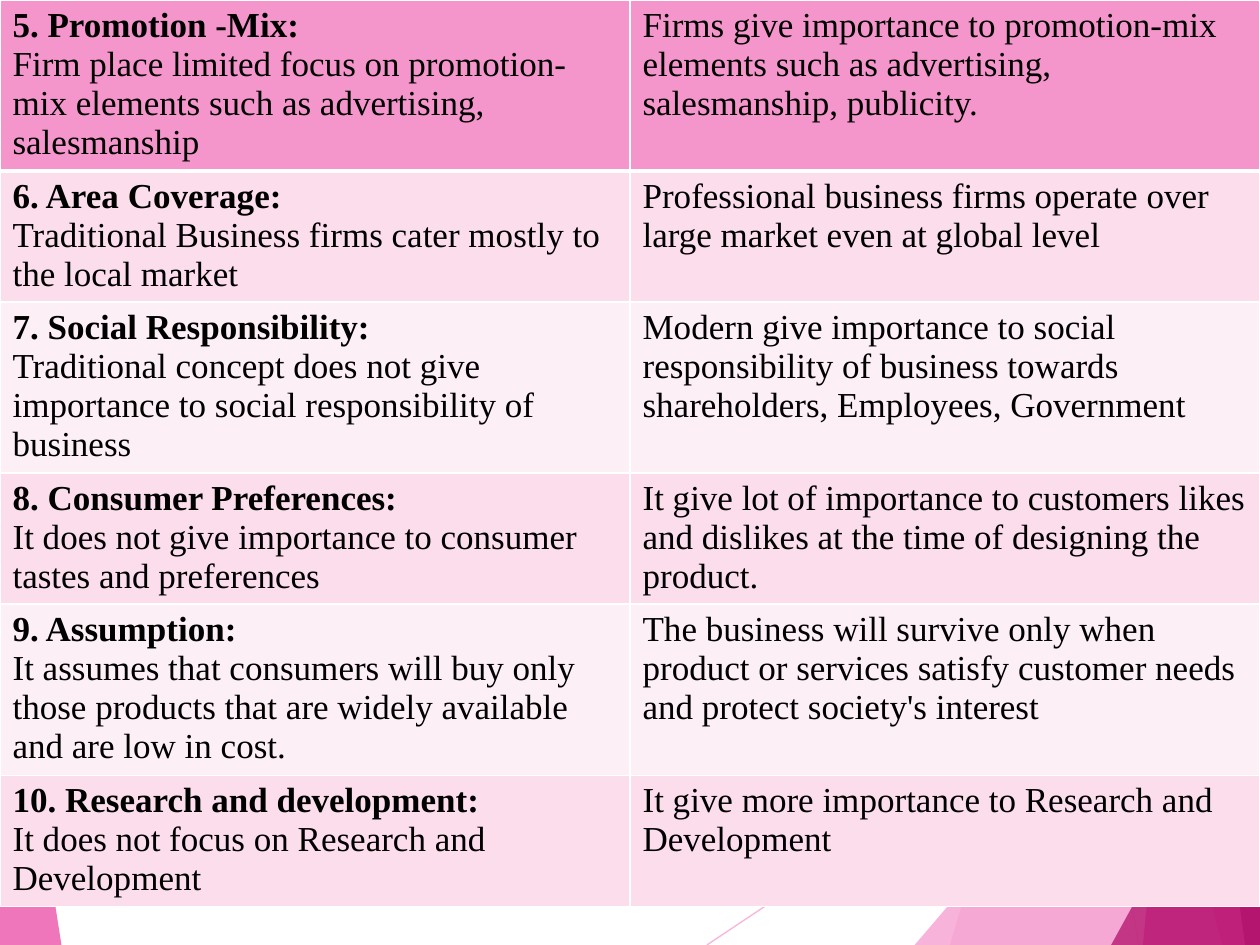
from lxml import etree
from pptx import Presentation
from pptx.dml.color import RGBColor
from pptx.enum.shapes import MSO_CONNECTOR
from pptx.oxml.ns import qn
from pptx.util import Cm, Pt

STRAIGHT = MSO_CONNECTOR.STRAIGHT
WIDTH, HEIGHT = 25.4, 19.05
FONT = "Times New Roman"
BLACK = RGBColor(0x00, 0x00, 0x00)
WHITE = RGBColor(0xFF, 0xFF, 0xFF)
PINK = RGBColor(0xF4, 0x96, 0xCB)
MAGENTA = RGBColor(0xEB, 0x3D, 0x9F)
CRIMSON = RGBColor(0xB2, 0x13, 0x6D)
BAND_DARK = RGBColor(0xFB, 0xDD, 0xEC)
BAND_LIGHT = RGBColor(0xFD, 0xEF, 0xF6)

LINES = [
    ((14.25, HEIGHT), (WIDTH, 11.62)),
    ((19.56, 0), (22.96, HEIGHT)),
]
RIGHT_PANELS = [
    (24.77, 0, 19.15, PINK, 36),
    (20.02, 0, 23.34, PINK, 20),
    (WIDTH, 10.9, 18.44, PINK, 72),
    (19.48, 0, 24.64, MAGENTA, 50),
    (24.92, 0, 23.04, MAGENTA, 66),
    (22.48, 0, 25.1, CRIMSON, 80),
    (WIDTH, 13.59, 22.4, CRIMSON, 76),
]
LEFT_PANEL = [(0, 11.15), (1.24, HEIGHT), (0, HEIGHT)]

ROWS = [
    ("5. Promotion -Mix:",
     "Firm place limited focus on promotion-mix elements such as advertising, salesmanship",
     "Firms give importance to promotion-mix elements such as advertising, "
     "salesmanship, publicity."),
    ("6. Area Coverage:",
     "Traditional Business firms cater mostly to the local market",
     "Professional business firms operate over large market even at global level"),
    ("7. Social Responsibility:",
     "Traditional concept does not give importance to social responsibility of business",
     "Modern give importance to social responsibility of business towards "
     "shareholders, Employees, Government"),
    ("8. Consumer Preferences:",
     "It does not give importance to consumer tastes and preferences",
     "It give lot of importance to customers likes and dislikes at the time of "
     "designing the product."),
    ("9. Assumption:",
     "It assumes that consumers will buy only those products that are widely "
     "available and are low in cost.",
     "The business will survive only when product or services satisfy customer "
     "needs and protect society's interest"),
    ("10. Research and development:",
     "It does not focus on Research and Development",
     "It give more importance to Research and Development"),
]
ROW_HEIGHTS = [3.45, 2.64] * 3


def set_opacity(shape, percent):
    color = shape._element.spPr.find(".//" + qn("a:srgbClr"))
    etree.SubElement(color, qn("a:alpha")).set("val", str(percent * 1000))


def add_accent_line(page, start, end):
    line = page.shapes.add_connector(STRAIGHT, *map(Cm, start + end))
    line.line.color.rgb = PINK
    line.line.width = Pt(0.75)
    set_opacity(line, 70)
    etree.SubElement(line._element.spPr, qn("a:effectLst"))


def add_panel(page, points, color, opacity):
    corners = [(Cm(x), Cm(y)) for x, y in points]
    builder = page.shapes.build_freeform(*corners[0])
    builder.add_line_segments(corners[1:], close=True)
    panel = builder.convert_to_shape()
    panel.shadow.inherit = False
    panel.fill.solid()
    panel.fill.fore_color.rgb = color
    panel.line.fill.background()
    set_opacity(panel, opacity)


def add_backdrop(page):
    for start, end in LINES:
        add_accent_line(page, start, end)
    for top_x, top_y, bottom_x, color, opacity in RIGHT_PANELS:
        points = [(top_x, top_y), (bottom_x, HEIGHT), (WIDTH, HEIGHT)]
        if top_x < WIDTH:
            points.append((WIDTH, top_y))
        add_panel(page, points, color, opacity)
    add_panel(page, LEFT_PANEL, MAGENTA, 70)


def set_borders(cell, top, bottom):
    properties = cell._tc.get_or_add_tcPr()
    sides = [("L", 1), ("R", 1), ("T", top), ("B", bottom)]
    for index, (side, points) in enumerate(sides):
        border = etree.Element(qn("a:ln" + side), w=str(Pt(points)))
        fill = etree.SubElement(border, qn("a:solidFill"))
        etree.SubElement(fill, qn("a:srgbClr"), val=str(WHITE))
        properties.insert(index, border)


def fill_cell(cell, texts, color):
    cell.fill.solid()
    cell.fill.fore_color.rgb = color
    frame = cell.text_frame
    frame.text = "\n".join(texts)
    for index, para in enumerate(frame.paragraphs):
        for span in para.runs:
            span.font.name = FONT
            span.font.size = Pt(20)
            span.font.color.rgb = BLACK
            span.font.bold = index == 0 and len(texts) > 1


def add_comparison_table(page):
    table = page.shapes.add_table(
        len(ROWS), 2, Cm(0), Cm(0), Cm(WIDTH), Cm(sum(ROW_HEIGHTS))
    ).table
    for index, (heading, traditional, modern) in enumerate(ROWS):
        table.rows[index].height = Cm(ROW_HEIGHTS[index])
        band = BAND_DARK if index % 2 else BAND_LIGHT
        color = band if index else PINK
        for column, texts in enumerate([(heading, traditional), (modern,)]):
            cell = table.cell(index, column)
            fill_cell(cell, texts, color)
            set_borders(cell, 3 if index == 1 else 1, 3 if index == 0 else 1)


def main():
    deck = Presentation()
    deck.slide_width = Cm(WIDTH)
    deck.slide_height = Cm(HEIGHT)
    page = deck.slides.add_slide(deck.slide_layouts[6])
    add_backdrop(page)
    add_comparison_table(page)
    deck.save("out.pptx")


if __name__ == "__main__":
    main()
